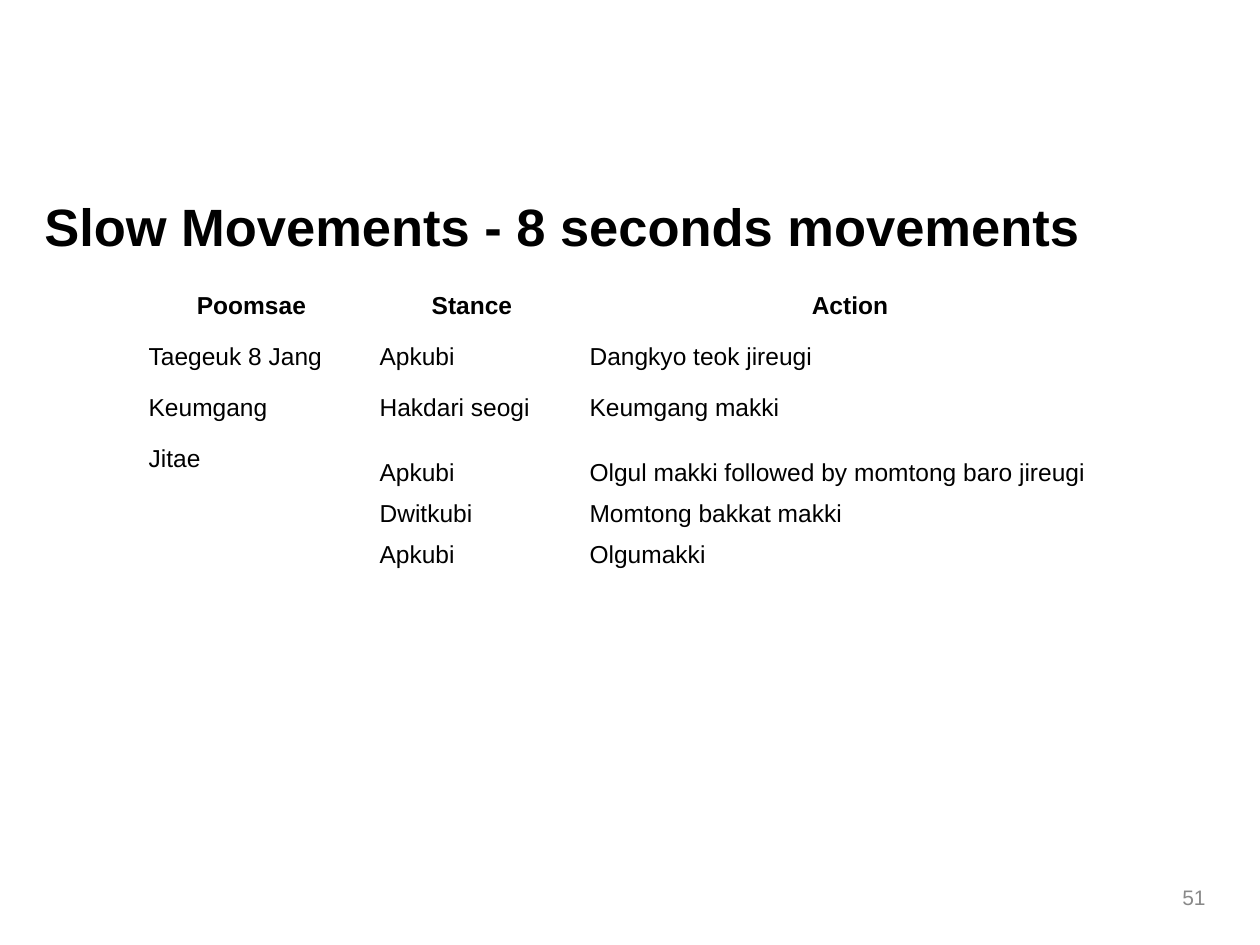
from pptx import Presentation
from pptx.dml.color import RGBColor
from pptx.enum.text import MSO_ANCHOR, PP_ALIGN
from pptx.util import Emu, Pt

EMU_PER_PX = 914400 // 126
FONT = "Arial"
BLACK, GRAY = "000000", "898989"

HEADINGS = ["Poomsae", "Stance", "Action"]
MOVEMENTS = [
    ["Taegeuk 8 Jang", "Apkubi", "Dangkyo teok jireugi"],
    ["Keumgang", "Hakdari seogi", "Keumgang makki"],
    [
        "Jitae",
        "Apkubi\nDwitkubi\nApkubi",
        "Olgul makki followed by momtong baro jireugi\n"
        "Momtong bakkat makki\nOlgumakki",
    ],
]
COLUMN_WIDTHS = [231, 210, 546]
ROW_HEIGHTS = [51, 51, 51, 150]


def px(length):
    return Emu(length * EMU_PER_PX)


def color(hex_string):
    return RGBColor.from_string(hex_string)


def write(frame, text, size, ink=BLACK, bold=False, align=PP_ALIGN.LEFT):
    frame.text = text
    for paragraph in frame.paragraphs:
        paragraph.alignment = align
        # Stacked movements are set with wider lines
        if len(frame.paragraphs) > 1:
            paragraph.line_spacing = 1.5
        for run in paragraph.runs:
            run.font.name = FONT
            run.font.size = Pt(size)
            run.font.bold = bold
            run.font.color.rgb = color(ink)


def add_label(slide, box, text, size, **style):
    frame = slide.shapes.add_textbox(*map(px, box)).text_frame
    frame.word_wrap = True
    frame.vertical_anchor = MSO_ANCHOR.MIDDLE
    write(frame, text, size, **style)


def add_movement_table(slide, left, top):
    rows = [HEADINGS] + MOVEMENTS
    table = slide.shapes.add_table(
        len(rows), len(HEADINGS), px(left), px(top),
        px(sum(COLUMN_WIDTHS)), px(sum(ROW_HEIGHTS)),
    ).table
    table.first_row = False
    table.horz_banding = False
    for column, width in zip(table.columns, COLUMN_WIDTHS):
        column.width = px(width)
    for row, height in zip(table.rows, ROW_HEIGHTS):
        row.height = px(height)

    for row_index, texts in enumerate(rows):
        heading = row_index == 0
        align = PP_ALIGN.CENTER if heading else PP_ALIGN.LEFT
        for column_index, text in enumerate(texts):
            cell = table.cell(row_index, column_index)
            cell.fill.background()
            write(cell.text_frame, text, 14, bold=heading, align=align)


def main():
    presentation = Presentation()
    presentation.slide_width = px(1260)
    presentation.slide_height = px(945)
    slide = presentation.slides.add_slide(presentation.slide_layouts[6])

    # Title
    add_label(slide, (32, 168, 1197, 116),
              "Slow Movements - 8 seconds movements", 30, bold=True)

    # Page number
    add_label(slide, (924, 872, 294, 50), "51", 12,
              ink=GRAY, align=PP_ALIGN.RIGHT)

    # Slow movements by poomsae
    add_movement_table(slide, 136, 286)

    presentation.save("out.pptx")


if __name__ == "__main__":
    main()
